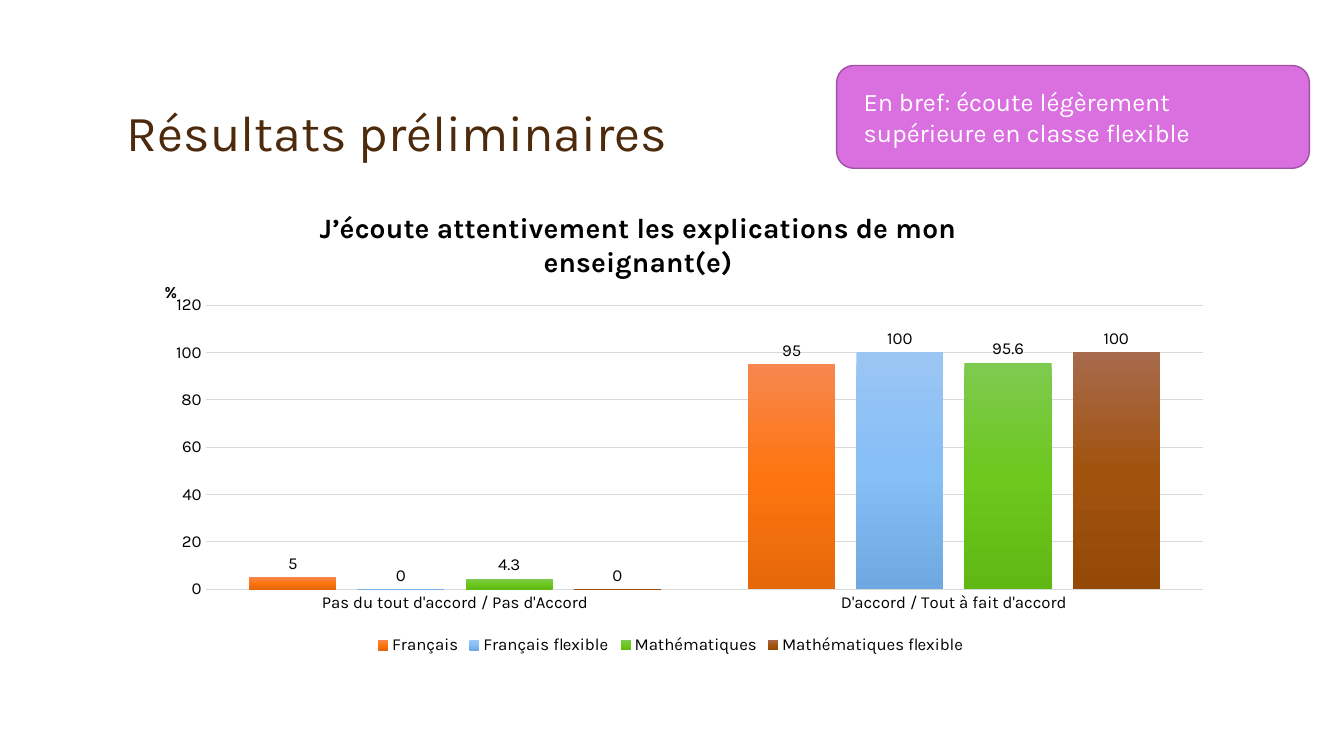
from dataclasses import dataclass

from lxml import etree
from pptx import Presentation
from pptx.chart import data as cd
from pptx.dml.color import RGBColor
from pptx.enum import chart as ch, shapes, text
from pptx.oxml import ns, parse_xml
from pptx.util import Pt

FONT = "Karla"
BLACK, GRID = "000000", "D9D9D9"


@dataclass
class Series:
    name: str
    values: tuple[float, float]
    gradient: tuple[str, str, str]


SERIES = [
    Series("Français", (5, 95), ("F7874E", "FE750F", "E5680A")),
    Series("Français flexible", (0, 100), ("9AC6F4", "86BEF6", "70A9E1")),
    Series("Mathématiques", (4.3, 95.6), ("7ECA50", "6CC81D", "60B813")),
    Series("Mathématiques flexible", (0, 100), ("A76A4C", "A1530E", "954907")),
]
CATEGORIES = ["Pas du tout d'accord / Pas d'Accord",
              "D'accord / Tout à fait d'accord"]


def rgb(value: str) -> RGBColor:
    return RGBColor.from_string(value)


def set_font(font, size: float, color: str = BLACK, bold: bool = False) -> None:
    for name, value in {"name": FONT, "size": Pt(size), "bold": bold}.items():
        setattr(font, name, value)
    font.color.rgb = rgb(color)


def set_line(line, color: str, width: float) -> None:
    line.color.rgb = rgb(color)
    line.width = Pt(width)


def set_gradient(fmt, colors: tuple[str, ...]) -> None:
    """Fill a chart element from top to bottom with evenly spaced stops."""
    step = 100000 // (len(colors) - 1)
    stops = "".join(
        f'<a:gs pos="{i * step}"><a:srgbClr val="{c}"/></a:gs>'
        for i, c in enumerate(colors))
    fmt.fill.solid()
    sp_pr = fmt._element.find(ns.qn("c:spPr"))
    sp_pr.replace(sp_pr.find(ns.qn("a:solidFill")), parse_xml(
        f'<a:gradFill {ns.nsdecls("a")} rotWithShape="1"><a:gsLst>{stops}'
        '</a:gsLst><a:lin ang="5400000" scaled="0"/></a:gradFill>'))


def set_layout(parent, index: int, **fractions: float) -> None:
    """Place a chart part by fractions of the chart area."""
    for old in parent.findall(ns.qn("c:layout")):
        parent.remove(old)
    layout = etree.Element(ns.qn("c:layout"))
    manual = etree.SubElement(layout, ns.qn("c:manualLayout"))
    settings = {"xMode": "edge", "yMode": "edge", **fractions}
    if "w" in fractions:
        settings = {"layoutTarget": "inner", **settings}
    for name, value in settings.items():
        etree.SubElement(manual, ns.qn(f"c:{name}")).set("val", str(value))
    parent.insert(index, layout)


def set_title(title, lines: list[str], size: float, x: float, y: float) -> None:
    tf = title.text_frame
    for i, line in enumerate(lines):
        p = tf.paragraphs[0] if i == 0 else tf.add_paragraph()
        p.alignment = text.PP_ALIGN.CENTER
        r = p.add_run()
        r.text = line
        set_font(r.font, size, bold=True)
    set_layout(title._element, 1, x=x, y=y)


def add_heading(s) -> None:
    sp = s.shapes.title
    sp.left, sp.top, sp.width, sp.height = Pt(83.5), Pt(24), Pt(792), Pt(95.5)
    tf = sp.text_frame
    tf.text = "Résultats préliminaires"
    tf.vertical_anchor = text.MSO_ANCHOR.BOTTOM
    tf.auto_size = text.MSO_AUTO_SIZE.NONE
    p = tf.paragraphs[0]
    p.alignment = text.PP_ALIGN.LEFT
    p.line_spacing = 0.9
    set_font(p.runs[0].font, 36, "4D2A0B")


def add_results_chart(s) -> None:
    data = cd.CategoryChartData()
    data.categories = CATEGORIES
    for item in SERIES:
        data.add_series(item.name, item.values)
    chart = s.shapes.add_chart(
        ch.XL_CHART_TYPE.COLUMN_CLUSTERED,
        Pt(83.5), Pt(138.2), Pt(792), Pt(332.6), data).chart
    set_font(chart.font, 12)
    chart.has_title = True
    set_title(chart.chart_title,
              ["J’écoute attentivement les explications de mon", "enseignant(e)"],
              20, 0.18, 0.03)
    chart.has_legend = True
    chart.legend.position = ch.XL_LEGEND_POSITION.BOTTOM
    chart.legend.include_in_layout = False
    set_font(chart.legend.font, 12)

    cat, val = chart.category_axis, chart.value_axis
    for axis in (cat, val):
        axis.major_tick_mark = axis.minor_tick_mark = ch.XL_TICK_MARK.NONE
        set_font(axis.tick_labels.font, 12)
    set_line(cat.format.line, GRID, 0.75)
    val.format.line.fill.background()
    set_line(val.major_gridlines.format.line, GRID, 0.75)
    val.minimum_scale, val.maximum_scale, val.major_unit = 0, 120, 20
    set_title(val.axis_title, ["%"], 12, 0.04, 0.18)
    val.axis_title.text_frame._txBody.bodyPr.set("rot", "0")

    plot = chart.plots[0]
    plot.gap_width, plot.overlap, plot.vary_by_categories = 100, -24, False
    for series, item in zip(plot.series, SERIES):
        set_gradient(series.format, item.gradient)
        labels = series.data_labels
        labels.show_value = True
        labels.position = ch.XL_LABEL_POSITION.OUTSIDE_END
        set_font(labels.font, 12)
    plot_area = chart._chartSpace.chart.plotArea
    set_layout(plot_area, 0, x=0.08, y=0.24, w=0.9, h=0.61)


def add_summary(s) -> None:
    sp = s.shapes.add_shape(shapes.MSO_SHAPE.ROUNDED_RECTANGLE,
                            Pt(597.6), Pt(46.8), Pt(337.7), Pt(73.4))
    sp.shadow.inherit = False
    sp.fill.solid()
    sp.fill.fore_color.rgb = rgb("DA6FDF")
    set_line(sp.line, "A152A5", 1)

    tf = s.shapes.add_textbox(Pt(609.8), Pt(58.3), Pt(320.4), Pt(51)).text_frame
    tf.word_wrap = True
    tf.auto_size = text.MSO_AUTO_SIZE.SHAPE_TO_FIT_TEXT
    r = tf.paragraphs[0].add_run()
    r.text = "En bref: écoute légèrement supérieure en classe flexible"
    set_font(r.font, 18, "FFFFFF")


def main() -> None:
    prs = Presentation()
    prs.slide_width, prs.slide_height = Pt(960), Pt(540)
    s = prs.slides.add_slide(prs.slide_layouts[5])
    add_heading(s)
    add_results_chart(s)
    add_summary(s)
    prs.save("out.pptx")


if __name__ == "__main__":
    main()
